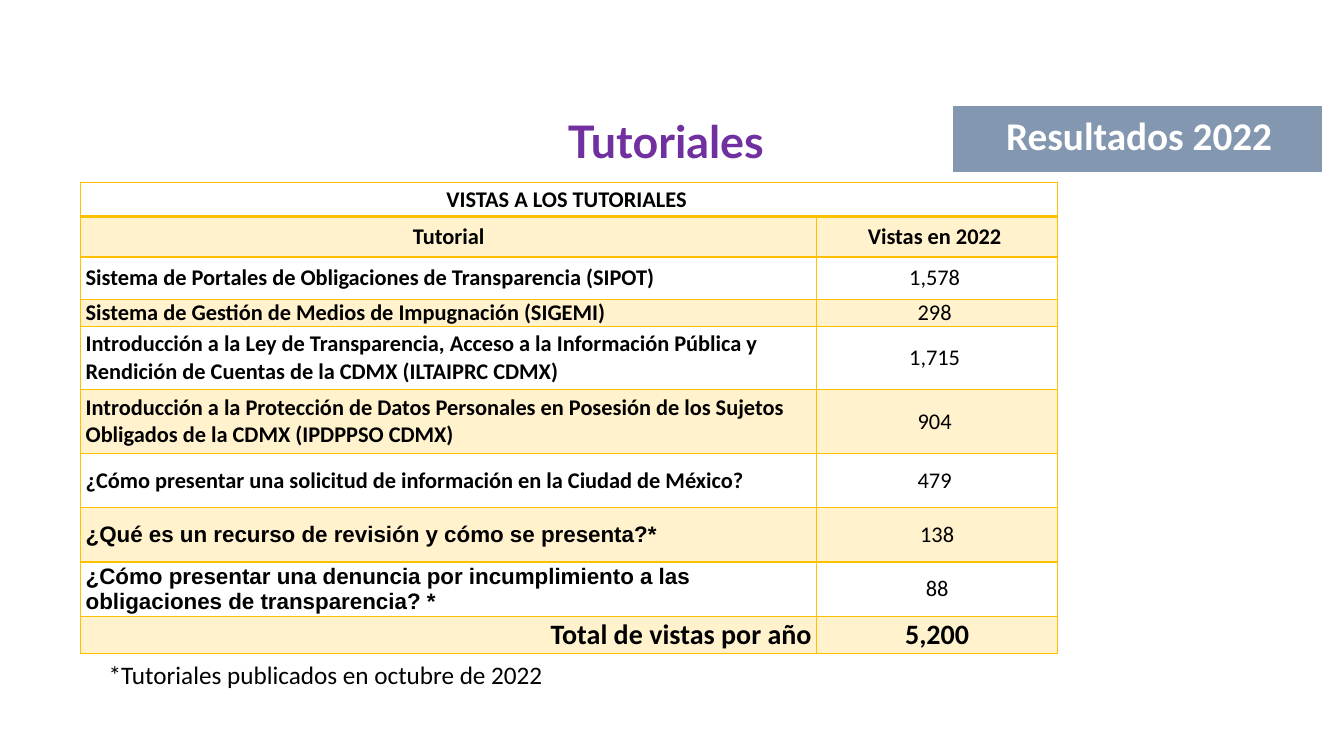
import pptx
import pptx.util
import pptx.dml.color
import pptx.enum.shapes
import pptx.enum.text
import pptx.oxml.ns
from lxml import etree

Inches = pptx.util.Inches
Align = pptx.enum.text.PP_ALIGN
Anchor = pptx.enum.text.MSO_ANCHOR

GOLD = "FFC000"
COLUMN_WIDTHS = [7.3, 2.39]
ROW_HEIGHTS = [0.34, 0.4, 0.42, 0.26, 0.63, 0.63, 0.54, 0.54, 0.54, 0.37]
ROWS = [
    ("VISTAS A LOS TUTORIALES ", ""),
    ("Tutorial", "Vistas en 2022 "),
    ("Sistema de Portales de Obligaciones de Transparencia (SIPOT)", "1,578 "),
    ("Sistema de Gestión de Medios de Impugnación (SIGEMI)", "298 "),
    ("Introducción a la Ley de Transparencia, Acceso a la Información Pública y "
     "Rendición de Cuentas de la CDMX (ILTAIPRC CDMX)", "1,715 "),
    ("Introducción a la Protección de Datos Personales en Posesión de los Sujetos "
     "Obligados de la CDMX (IPDPPSO CDMX)", "904 "),
    ("¿Cómo presentar una solicitud de información en la Ciudad de México?", "479 "),
    ("¿Qué es un recurso de revisión y cómo se presenta?*", "138"),
    ("¿Cómo presentar una denuncia por incumplimiento a las "
     "obligaciones de transparencia? *", "88"),
    ("Total de vistas por año", "5,200"),
]
ARIAL_ROWS = (7, 8)
TOTAL_ROW = len(ROWS) - 1


def color(value):
    return pptx.dml.color.RGBColor.from_string(value)


def write(frame, text, size, tint="000000", bold=False, font="Calibri", align=Align.LEFT):
    frame.word_wrap = True
    frame.text = text
    para = frame.paragraphs[0]
    para.alignment = align
    for span in para.runs:
        span.font.name = font
        span.font.size = pptx.util.Pt(size)
        span.font.bold = bold
        span.font.color.rgb = color(tint)
    return para


def add_child(parent, tag, **attributes):
    return etree.SubElement(parent, pptx.oxml.ns.qn(tag), **attributes)


def add_borders(cell, top, bottom):
    properties = cell._tc.get_or_add_tcPr()
    for side, width in (("L", 1), ("R", 1), ("T", top), ("B", bottom)):
        line = add_child(properties, f"a:ln{side}", w=str(pptx.util.Pt(width)))
        add_child(add_child(line, "a:solidFill"), "a:srgbClr", val=GOLD)


def fill_cell(cell, shaded):
    if not shaded:
        cell.fill.background()
        return
    cell.fill.solid()
    cell.fill.fore_color.rgb = color(GOLD)
    swatch = cell._tc.tcPr.find(".//" + pptx.oxml.ns.qn("a:solidFill") + "[last()]/"
                                + pptx.oxml.ns.qn("a:srgbClr"))
    # The cell's own fill is the direct child, after the border lines
    swatch = cell._tc.tcPr.find(pptx.oxml.ns.qn("a:solidFill"))[0]
    add_child(swatch, "a:alpha", val="20000")


def add_title(page):
    title = page.shapes.title
    title.left, title.top = Inches(2.35), Inches(1.14)
    title.width, title.height = Inches(8.62), Inches(0.59)
    title.text_frame.auto_size = pptx.enum.text.MSO_AUTO_SIZE.NONE
    title.text_frame.vertical_anchor = Anchor.TOP
    para = write(title.text_frame, "Tutoriales ", 32, "7030A0", True, "Lato", Align.CENTER)
    para.line_spacing = 0.9


def add_band(page):
    band = page.shapes.add_shape(pptx.enum.shapes.MSO_SHAPE.RECTANGLE,
                                 Inches(9.45), Inches(1.04), Inches(3.67), Inches(0.67))
    band.shadow.inherit = False
    band.fill.solid()
    band.fill.fore_color.rgb = color("8497B0")
    band.line.color.rgb = color("FFFFFF")
    band.line.width = pptx.util.Pt(1)


def add_text(page, left, top, width, height, text, size, **style):
    box = page.shapes.add_textbox(Inches(left), Inches(top), Inches(width), Inches(height))
    return box.text_frame, write(box.text_frame, text, size, **style)


def add_views_table(page):
    frame = page.shapes.add_table(len(ROWS), 2, Inches(0.8), Inches(1.81),
                                  Inches(sum(COLUMN_WIDTHS)), Inches(sum(ROW_HEIGHTS)))
    table = frame.table
    table.first_row = table.horz_banding = False
    for column, width in zip(table.columns, COLUMN_WIDTHS):
        column.width = Inches(width)
    for row, height in zip(table.rows, ROW_HEIGHTS):
        row.height = Inches(height)
    table.cell(0, 0).merge(table.cell(0, 1))

    for r, texts in enumerate(ROWS):
        for c, text in enumerate(texts):
            cell = table.cell(r, c)
            cell.margin_left = cell.margin_right = Inches(0.05)
            cell.margin_top = cell.margin_bottom = 0
            cell.vertical_anchor = Anchor.MIDDLE
            add_borders(cell, top=2 if r == 1 else 1, bottom=2 if r == 0 else 1)
            fill_cell(cell, shaded=r % 2 == 1)
            if c == 1 or r < 2:
                align = Align.CENTER
            else:
                align = Align.RIGHT if r == TOTAL_ROW else Align.LEFT
            write(cell.text_frame, text, 20 if r == TOTAL_ROW else 16,
                  bold=c == 0 or r in (1, TOTAL_ROW),
                  font="Arial" if c == 0 and r in ARIAL_ROWS else "Calibri",
                  align=align)


def main():
    deck = pptx.Presentation()
    deck.slide_width, deck.slide_height = Inches(13.33), Inches(7.5)
    page = deck.slides.add_slide(deck.slide_layouts[5])

    # Heading and results band
    add_band(page)
    label, para = add_text(page, 9.45, 1.03, 3.36, 0.67, "Resultados 2022", 28,
                           tint="FFFFFF", bold=True)
    label.vertical_anchor = Anchor.MIDDLE
    label.margin_left = Inches(0.53)
    label.margin_right = label.margin_top = label.margin_bottom = Inches(0.08)
    para.line_spacing = 0.9
    add_title(page)

    # Views per tutorial and footnote
    add_views_table(page)
    add_text(page, 0.98, 6.49, 6.67, 0.4, "*Tutoriales publicados en octubre de 2022", 18)

    deck.save("out.pptx")


if __name__ == "__main__":
    main()
